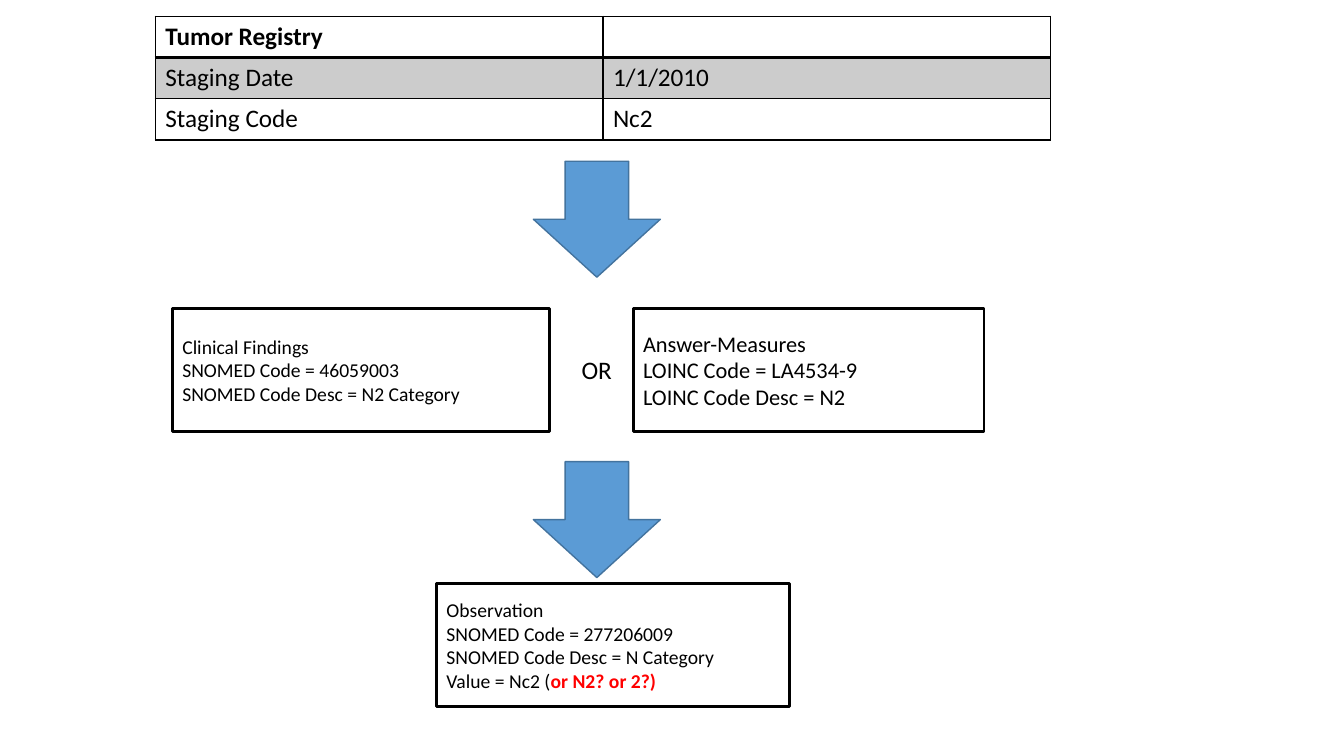
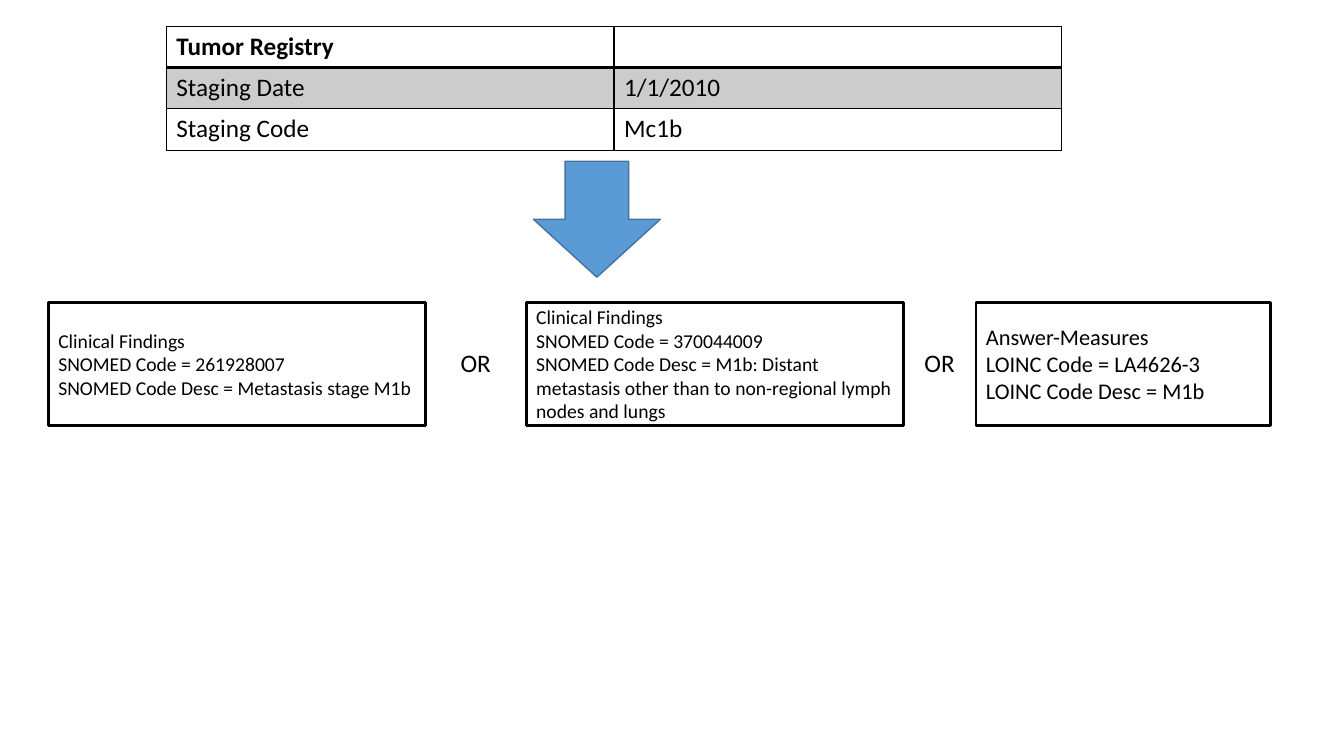
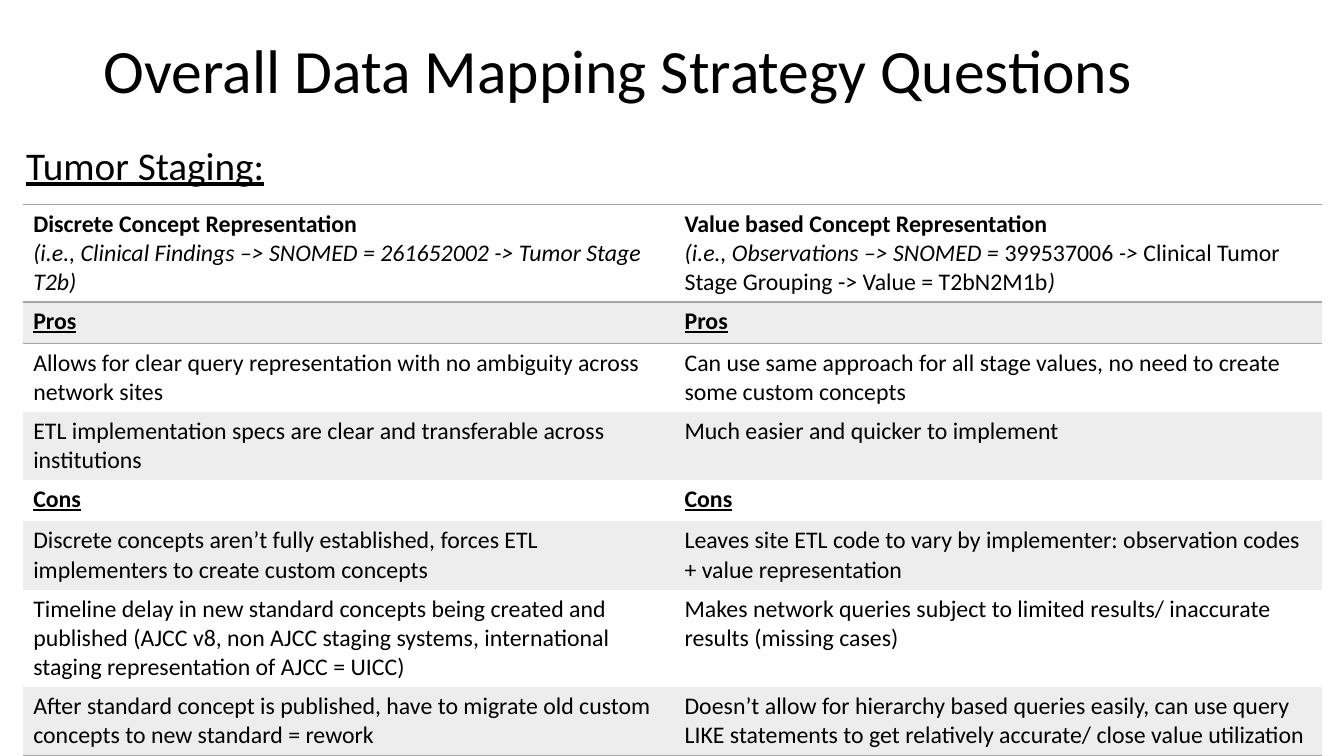
"""Builds three slides on mapping tumor registry staging to standard concepts."""
from dataclasses import dataclass

from lxml.etree import SubElement
from pptx import Presentation
from pptx.dml.color import RGBColor
from pptx.enum.shapes import MSO_SHAPE
from pptx.enum.text import MSO_ANCHOR, MSO_AUTO_SIZE, PP_ALIGN
from pptx.oxml.ns import qn
from pptx.util import Inches, Pt


@dataclass(frozen=True)
class Theme:
    font: str = "Calibri"
    text: str = "000000"
    paper: str = "FFFFFF"
    alert: str = "FF0000"
    arrow: str = "5B9BD5"
    arrow_line: str = "43739E"
    registry_band: str = "CCCCCC"
    strategy_band: str = "EDEDED"
    strategy_line: str = "A5A5A5"
    title: int = 44
    subtitle: int = 28
    body: int = 18
    strategy: int = 17
    large_box: int = 16
    small_box: int = 14


THEME = Theme()
SLIDE_WIDTH, SLIDE_HEIGHT = 13.33, 7.5
ROW_HEIGHT = 0.41
BOX_HEIGHT = 1.22
ARROW_LEFT, ARROW_WIDTH, ARROW_HEIGHT = 5.29, 1.26, 1.15
LABEL_WIDTH, LABEL_HEIGHT = 0.5, 0.4
NO_TABLE_STYLE = "{2D5ABB26-0587-4C30-8999-92F81FD0307C}"

FLOWS = [
    {
        "table": (1.54, 0.16),
        "code": "Nc2",
        "arrows": [1.6, 4.58],
        "labels": [(5.67, 3.47)],
        "boxes": [
            (1.71, 3.06, 3.74, THEME.small_box,
             ["Clinical Findings", "SNOMED Code = 46059003",
              "SNOMED Code Desc = N2 Category"]),
            (6.28, 3.06, 3.48, THEME.large_box,
             ["Answer-Measures", "LOINC Code = LA4534-9", "LOINC Code Desc = N2"]),
            (4.33, 5.79, 3.5, THEME.small_box,
             ["Observation", "SNOMED Code = 277206009",
              "SNOMED Code Desc = N Category",
              [("Value = Nc2 (", ""), ("or N2? or 2?)", "bold alert")]]),
        ],
    },
    {
        "table": (1.65, 0.26),
        "code": "Mc1b",
        "arrows": [1.6],
        "labels": [(4.47, 3.4), (9.07, 3.4)],
        "boxes": [
            (0.48, 3, 3.74, THEME.small_box,
             ["Clinical Findings", "SNOMED Code = 261928007",
              "SNOMED Code Desc = Metastasis stage M1b"]),
            (5.22, 3, 3.74, THEME.small_box,
             ["Clinical Findings", "SNOMED Code = 370044009",
              "SNOMED Code Desc = M1b: Distant metastasis other than to "
              "non-regional lymph nodes and lungs"]),
            (9.68, 3, 2.92, THEME.large_box,
             ["Answer-Measures", "LOINC Code = LA4626-3", "LOINC Code Desc = M1b"]),
        ],
    },
]

STRATEGY_TITLE = "Overall Data Mapping Strategy Questions"
STRATEGY_SUBTITLE = [("Tumor Staging:", "underline")]
PROS = [[("Pros", "bold underline")]]
CONS = [[("Cons", "bold underline")]]
STRATEGY_ROWS = [
    ([[("Discrete Concept Representation", "bold")],
      [("(i.e., Clinical Findings –> SNOMED = 261652002 -> Tumor Stage T2b)", "italic")]],
     [[("Value based Concept Representation", "bold")],
      [("(i.e., Observations –> SNOMED = ", "italic"), ("399537006", ""),
       (" -> ", "italic"),
       ("Clinical Tumor Stage Grouping -> Value = T2bN2M1b", ""), (")", "italic")]]),
    (PROS, PROS),
    (["Allows for clear query representation with no ambiguity across network sites"],
     ["Can use same approach for all stage values, no need to create some custom concepts"]),
    (["ETL implementation specs are clear and transferable across institutions"],
     ["Much easier and quicker to implement"]),
    (CONS, CONS),
    (["Discrete concepts aren’t fully established, forces ETL implementers to create "
      "custom concepts"],
     ["Leaves site ETL code to vary by implementer: observation codes + value "
      "representation"]),
    (["Timeline delay in new standard concepts being created and published (AJCC v8, "
      "non AJCC staging systems, international staging representation of AJCC = UICC)"],
     ["Makes network queries subject to limited results/ inaccurate results "
      "(missing cases)"]),
    (["After standard concept is published, have to migrate old custom concepts to new "
      "standard = rework"],
     ["Doesn’t allow for hierarchy based queries easily, can use query LIKE statements "
      "to get relatively accurate/ close value utilization"]),
]


def color(value):
    return RGBColor.from_string(value)


def apply_flags(font, flags):
    for flag in flags.split():
        if flag == "alert":
            font.color.rgb = color(THEME.alert)
        else:
            setattr(font, flag, True)


def write(frame, paragraphs, size):
    for index, content in enumerate(paragraphs):
        paragraph = frame.add_paragraph() if index else frame.paragraphs[0]
        paragraph.alignment = PP_ALIGN.LEFT
        font = paragraph.font
        font.name, font.size = THEME.font, Pt(size)
        font.color.rgb = color(THEME.text)
        runs = [(content, "")] if isinstance(content, str) else content
        if len(runs) == 1:
            apply_flags(font, runs[0][1])
        for text, flags in runs:
            run = paragraph.add_run()
            run.text = text
            if len(runs) > 1:
                apply_flags(run.font, flags)


def place(shape, left, top, width, height):
    shape.left, shape.top = Inches(left), Inches(top)
    shape.width, shape.height = Inches(width), Inches(height)


def add_shape(slide, kind, area, fill, line, line_width):
    shape = slide.shapes.add_shape(kind, *map(Inches, area))
    shape.shadow.inherit = False
    shape.fill.solid()
    shape.fill.fore_color.rgb = color(fill)
    shape.line.color.rgb = color(line)
    shape.line.width = Pt(line_width)
    return shape


def set_borders(cell, line, widths):
    properties = cell._tc.get_or_add_tcPr()
    for side in "LRTB":
        if side in widths:
            border = SubElement(properties, qn(f"a:ln{side}"), w=str(Pt(widths[side])))
            fill = SubElement(border, qn("a:solidFill"))
            SubElement(fill, qn("a:srgbClr"), val=line)


def add_table(slide, position, columns, rows, size, band, line, border_widths):
    area = (*position, sum(columns), ROW_HEIGHT * len(rows))
    table = slide.shapes.add_table(len(rows), len(columns), *map(Inches, area)).table
    table.horz_banding = False
    table._tbl.tblPr.find(qn("a:tableStyleId")).text = NO_TABLE_STYLE
    for column, width in zip(table.columns, columns):
        column.width = Inches(width)
    for row_index, row in enumerate(rows):
        table.rows[row_index].height = Inches(ROW_HEIGHT)
        for column_index, paragraphs in enumerate(row):
            cell = table.cell(row_index, column_index)
            set_borders(cell, line, border_widths(row_index, len(rows)))
            cell.fill.solid()
            cell.fill.fore_color.rgb = color(band if row_index % 2 else THEME.paper)
            write(cell.text_frame, paragraphs, size)


def registry_borders(row, count):
    return {"L": 1, "R": 1, "T": 2 if row == 1 else 1, "B": 2 if row == 0 else 1}


def strategy_borders(row, count):
    sides = {"T": row in (0, 1), "B": row in (0, count - 1)}
    return {side: 1 for side, shown in sides.items() if shown}


def add_flow_slide(presentation, flow):
    slide = presentation.slides.add_slide(presentation.slide_layouts[6])
    rows = [
        ([[("Tumor Registry", "bold")]], []),
        (["Staging Date"], ["1/1/2010"]),
        (["Staging Code"], [flow["code"]]),
    ]
    add_table(slide, flow["table"], (4.44, 4.44), rows, THEME.body,
              THEME.registry_band, THEME.text, registry_borders)
    for top in flow["arrows"]:
        add_shape(slide, MSO_SHAPE.DOWN_ARROW, (ARROW_LEFT, top, ARROW_WIDTH, ARROW_HEIGHT),
                  THEME.arrow, THEME.arrow_line, 1)
    for left, top, width, size, paragraphs in flow["boxes"]:
        box = add_shape(slide, MSO_SHAPE.RECTANGLE, (left, top, width, BOX_HEIGHT),
                        THEME.paper, THEME.text, 2)
        box.text_frame.word_wrap = True
        box.text_frame.vertical_anchor = MSO_ANCHOR.MIDDLE
        write(box.text_frame, paragraphs, size)
    for position in flow["labels"]:
        area = (*position, LABEL_WIDTH, LABEL_HEIGHT)
        label = slide.shapes.add_textbox(*map(Inches, area))
        write(label.text_frame, ["OR"], THEME.body)


def add_strategy_slide(presentation):
    slide = presentation.slides.add_slide(presentation.slide_layouts[1])
    title, body = slide.placeholders
    place(title, 0.93, 0, 11.5, 1.45)
    place(body, 0.16, 1.4, 11.5, 4.76)
    title.text_frame.vertical_anchor = MSO_ANCHOR.MIDDLE
    properties = body.text_frame.paragraphs[0]._p.get_or_add_pPr()
    properties.set("marL", "0")
    properties.set("indent", "0")
    SubElement(properties, qn("a:buNone"))
    for placeholder, content, size in (
        (title, STRATEGY_TITLE, THEME.title),
        (body, STRATEGY_SUBTITLE, THEME.subtitle),
    ):
        placeholder.text_frame.auto_size = MSO_AUTO_SIZE.NONE
        write(placeholder.text_frame, [content], size)
        paragraph = placeholder.text_frame.paragraphs[0]
        paragraph.line_spacing = 0.9
        paragraph.space_before = Pt(0)
    add_table(slide, (0.23, 2.03), (6.46, 6.42), STRATEGY_ROWS, THEME.strategy,
              THEME.strategy_band, THEME.strategy_line, strategy_borders)


def main():
    presentation = Presentation()
    presentation.slide_width = Inches(SLIDE_WIDTH)
    presentation.slide_height = Inches(SLIDE_HEIGHT)
    for flow in FLOWS:
        add_flow_slide(presentation, flow)
    add_strategy_slide(presentation)
    presentation.save("out.pptx")


if __name__ == "__main__":
    main()
